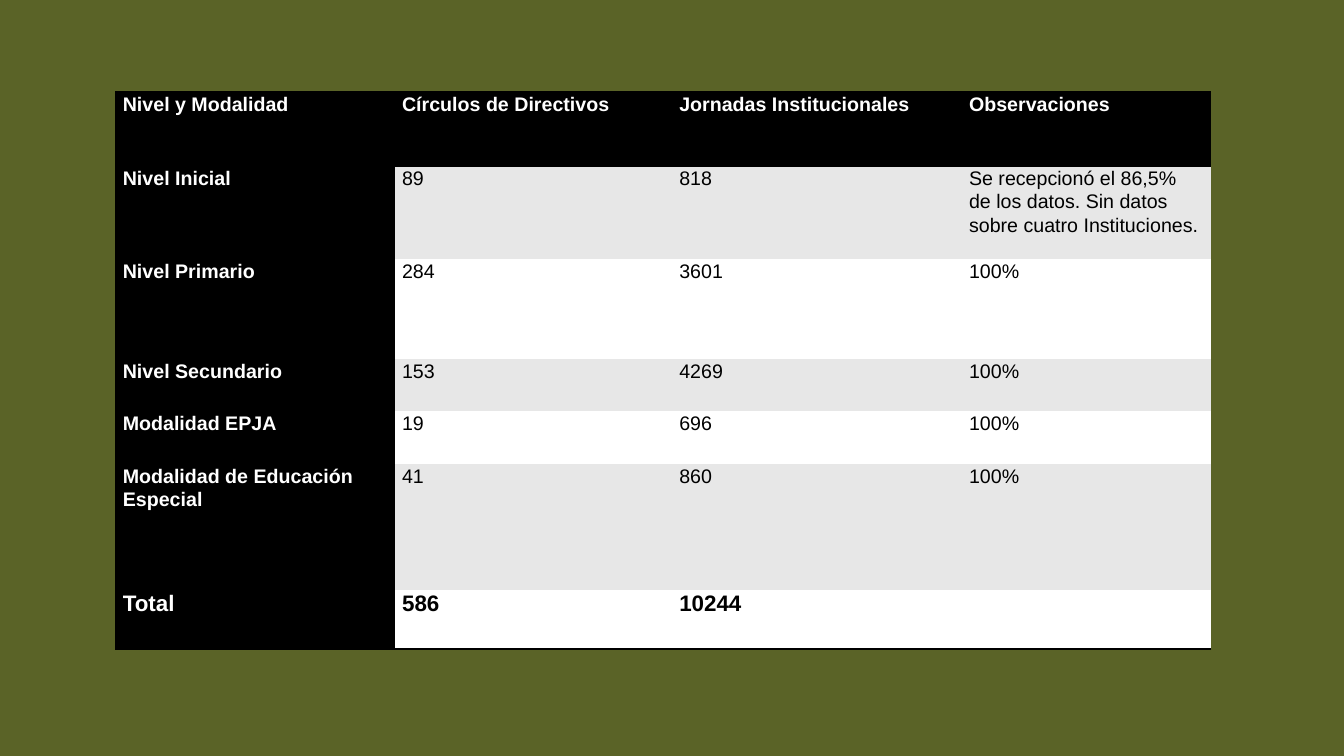
from lxml.etree import SubElement
from pptx import Presentation
from pptx.dml.color import RGBColor
from pptx.oxml.ns import qn
from pptx.util import Pt

PX = 9525
COLORS = {"olive": "5A6327", "black": "000000", "white": "FFFFFF", "gray": "E7E7E7"}
NO_STYLE = "{2D5ABB26-0587-4C30-8999-92F81FD0307C}"
COL_WIDTHS = [266, 264, 276, 237]
ROW_HEIGHTS = [70, 89, 95, 50, 50, 120, 56]
ROWS = [
    ["Nivel y Modalidad", "Círculos de Directivos", "Jornadas Institucionales", "Observaciones"],
    ["Nivel Inicial", "89", "818",
     "Se recepcionó el 86,5% de los datos. Sin datos sobre cuatro Instituciones."],
    ["Nivel Primario", "284", "3601", "100%"],
    ["Nivel Secundario", "153", "4269", "100%"],
    ["Modalidad EPJA", "19", "696", "100%"],
    ["Modalidad de Educación Especial", "41", "860", "100%"],
    ["Total", "586", "10244", ""],
]


def rgb(name):
    """Return the named colour."""
    return RGBColor.from_string(COLORS[name])


def add_borders(cell, sides):
    """Draw black 2 pt borders on the given sides, in schema order."""
    tcPr = cell._tc.get_or_add_tcPr()
    for i, side in enumerate(sides):
        ln = SubElement(tcPr, qn(f"a:ln{side}"), w=str(Pt(2)))
        fill = SubElement(ln, qn("a:solidFill"))
        SubElement(fill, qn("a:srgbClr"), val=COLORS["black"])
        tcPr.insert(i, ln)


def format_cell(cell, text, fill, color, size, bold):
    """Fill a cell and set its text."""
    cell.margin_left = cell.margin_right = 7 * PX
    cell.margin_top = cell.margin_bottom = 0
    cell.fill.solid()
    cell.fill.fore_color.rgb = rgb(fill)
    p = cell.text_frame.paragraphs[0]
    p.text = text
    p.line_spacing = 1.07
    for r in p.runs:
        r.font.name = "Arial"
        r.font.size = Pt(size)
        r.font.bold = bold
        r.font.color.rgb = rgb(color)


def add_summary_table(s, left, top, width, height):
    """Add the table of levels and totals in the given box."""
    frame = s.shapes.add_table(len(ROWS), len(COL_WIDTHS),
                               left * PX, top * PX, width * PX, height * PX)
    table = frame.table
    table.horz_banding = table.first_row = False
    table._tbl.tblPr.find(qn("a:tableStyleId")).text = NO_STYLE
    for col, w in zip(table.columns, COL_WIDTHS):
        col.width = round(width * w / sum(COL_WIDTHS)) * PX
    for row, h in zip(table.rows, ROW_HEIGHTS):
        row.height = round(height * h / sum(ROW_HEIGHTS)) * PX
    last = len(ROWS) - 1
    borders = {0: "TB", last: "B"}
    for i, row in enumerate(ROWS):
        for j, text in enumerate(row):
            heading = i == 0 or j == 0
            band = "gray" if i % 2 else "white"
            cell = table.cell(i, j)
            format_cell(cell, text, "black" if heading else band,
                        "white" if heading else "black",
                        16 if i == last else 14, heading or i == last)
            add_borders(cell, borders.get(i, ""))


def main():
    """Build and save the slide."""
    prs = Presentation()
    prs.slide_width, prs.slide_height = 1280 * PX, 720 * PX
    s = prs.slides.add_slide(prs.slide_layouts[6])
    s.background.fill.solid()
    s.background.fill.fore_color.rgb = rgb("olive")
    add_summary_table(s, 110, 88, 1043, 530)
    prs.save("out.pptx")


if __name__ == "__main__":
    main()
